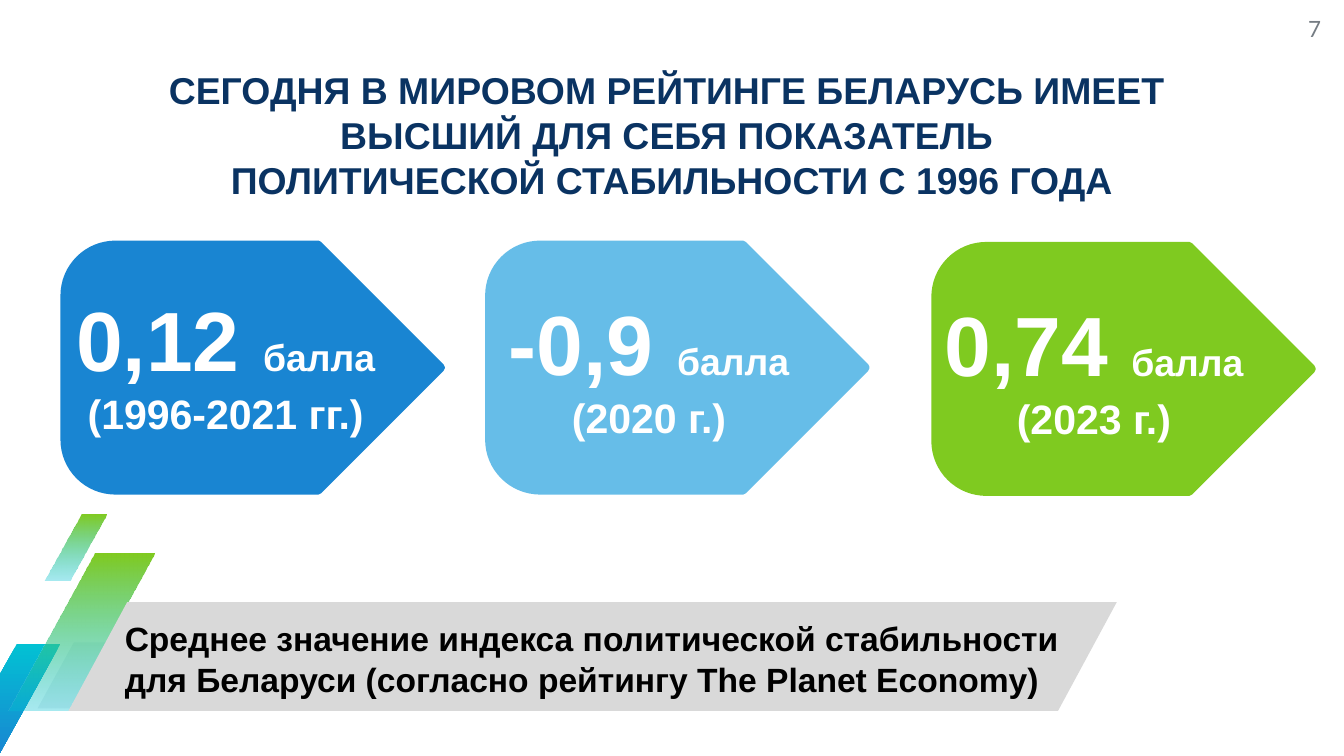
from dataclasses import dataclass
from math import cos, pi, sin

from lxml import etree
from pptx import Presentation
from pptx.dml.color import RGBColor
from pptx.enum.shapes import MSO_SHAPE
from pptx.enum.text import MSO_ANCHOR, PP_ALIGN
from pptx.oxml.ns import qn
from pptx.util import Inches, Pt

LEFT, CENTER, RIGHT = PP_ALIGN.LEFT, PP_ALIGN.CENTER, PP_ALIGN.RIGHT
MIDDLE = MSO_ANCHOR.MIDDLE
PARALLELOGRAM = MSO_SHAPE.PARALLELOGRAM


@dataclass(frozen=True)
class Theme:
    font: str = "Arial"
    number_font: str = "Lato"
    navy: str = "0A3362"
    blue: str = "1985D2"
    sky: str = "66BDE8"
    green: str = "7FCA20"
    teal: str = "02C1D3"
    pale: str = "EBF0F3"
    band: str = "D9D9D9"
    muted: str = "757C83"
    white: str = "FFFFFF"
    black: str = "000000"
    number_size: int = 12
    note_size: int = 18
    title_size: int = 20
    unit_size: int = 20
    period_size: int = 22
    score_size: int = 45


theme = Theme()


def add_slant(left, top, width, height, skew, colors, end_alpha=100):
    """Add a parallelogram with a solid fill or a top-to-bottom gradient."""
    shape = page.shapes.add_shape(
        PARALLELOGRAM, Inches(left), Inches(top), Inches(width), Inches(height))
    shape.adjustments[0] = skew
    shape.shadow.inherit = False
    shape.line.fill.background()
    if len(colors) == 1:
        shape.fill.solid()
        shape.fill.fore_color.rgb = RGBColor.from_string(colors[0])
        return
    shape.fill.gradient()
    shape.fill.gradient_angle = 270
    for stop, color in zip(shape.fill.gradient_stops, colors):
        stop.color.rgb = RGBColor.from_string(color)
    if end_alpha < 100:
        last_color = shape._element.spPr.findall(".//" + qn("a:srgbClr"))[-1]
        etree.SubElement(last_color, qn("a:alpha"), val=str(end_alpha * 1000))


def add_text(left, top, width, height, lines, color, align, bold=True, font=theme.font):
    """Add a text box; each line is a list of (text, size) spans."""
    box = page.shapes.add_textbox(
        Inches(left), Inches(top), Inches(width), Inches(height))
    frame = box.text_frame
    frame.word_wrap = True
    for index, spans in enumerate(lines):
        para = frame.paragraphs[0] if index == 0 else frame.add_paragraph()
        para.alignment = align
        para.font.name = font
        para.font.bold = bold
        para.font.color.rgb = RGBColor.from_string(color)
        for text, size in spans:
            span = para.add_run()
            span.text = text
            span.font.size = Pt(size)
    return frame


deck = Presentation()
deck.slide_width = Inches(10)
deck.slide_height = Inches(10 * 9 / 16)
page = deck.slides.add_slide(deck.slide_layouts[6])

# Slanted decoration in the lower left corner
add_slant(0.28, 4.78, 7.32, 0.49, 0.55, [theme.pale])
add_slant(-0.34, 4.79, 0.79, 0.84, 0.59, [theme.teal, theme.blue])
for left, top, width, height in [(0.06, 4.12, 1.09, 1.17), (0.33, 3.83, 0.46, 0.49)]:
    add_slant(left, top, width, height, 0.59, [theme.green, theme.teal], end_alpha=34)

# Slide number
number = add_text(9.36, 0, 0.47, 0.43, [[("7", theme.number_size)]],
                  theme.muted, RIGHT, bold=False, font=theme.number_font)
number.vertical_anchor = MIDDLE
number.margin_left = number.margin_right = number.margin_top = number.margin_bottom = 0

# Arrow outline: rounded left corners, slightly blunted tip
ARROW_HEIGHT, RADIUS, STEPS = 1.89, 0.41, 16
upper_arc = [(RADIUS - RADIUS * cos(step * pi / 2 / STEPS),
              RADIUS - RADIUS * sin(step * pi / 2 / STEPS))
             for step in range(STEPS + 1)]
upper_half = upper_arc + [(1.92, 0), (1.94, 0.01), (2.85, 0.92), (2.86, 0.94)]
lower_half = [(x, ARROW_HEIGHT - y) for x, y in reversed(upper_half)]
outline = upper_half + lower_half

# Score arrows: left, top, colour, text left, text top, score, period
arrows = [
    (0.45, 1.79, theme.blue, 0.43, 2.09, "0,12 ", "(1996-2021 гг.)"),
    (3.61, 1.79, theme.sky, 3.58, 2.12, "-0,9 ", "(2020 г.)"),
    (6.93, 1.8, theme.green, 6.89, 2.13, "0,74 ", "(2023 г.)"),
]
for left, top, color, text_left, text_top, score, period in arrows:
    points = [(Inches(left + x), Inches(top + y)) for x, y in outline]
    builder = page.shapes.build_freeform(*points[0])
    builder.add_line_segments(points[1:], close=True)
    arrow = builder.convert_to_shape()
    arrow.shadow.inherit = False
    arrow.fill.solid()
    arrow.fill.fore_color.rgb = RGBColor.from_string(color)
    arrow.line.fill.background()
    add_text(text_left, text_top, 2.5, 1.23,
             [[(score, theme.score_size), ("балла", theme.unit_size)],
              [(period, theme.period_size)]],
             theme.white, CENTER)

# Explanatory band
add_slant(0.51, 4.48, 7.8, 0.81, 0.54, [theme.band])
note = ("Среднее значение индекса политической стабильности "
        "для Беларуси (согласно рейтингу The Planet Economy)")
add_text(0.83, 4.55, 7.48, 0.71, [[(note, theme.note_size)]], theme.black, LEFT)

# Title
title = [
    "СЕГОДНЯ В МИРОВОМ РЕЙТИНГЕ БЕЛАРУСЬ ИМЕЕТ ",
    "ВЫСШИЙ ДЛЯ СЕБЯ ПОКАЗАТЕЛЬ ",
    "ПОЛИТИЧЕСКОЙ СТАБИЛЬНОСТИ С 1996 ГОДА",
]
add_text(0, 0.45, 10, 1.11, [[(line, theme.title_size)] for line in title],
         theme.navy, CENTER)

deck.save("out.pptx")
